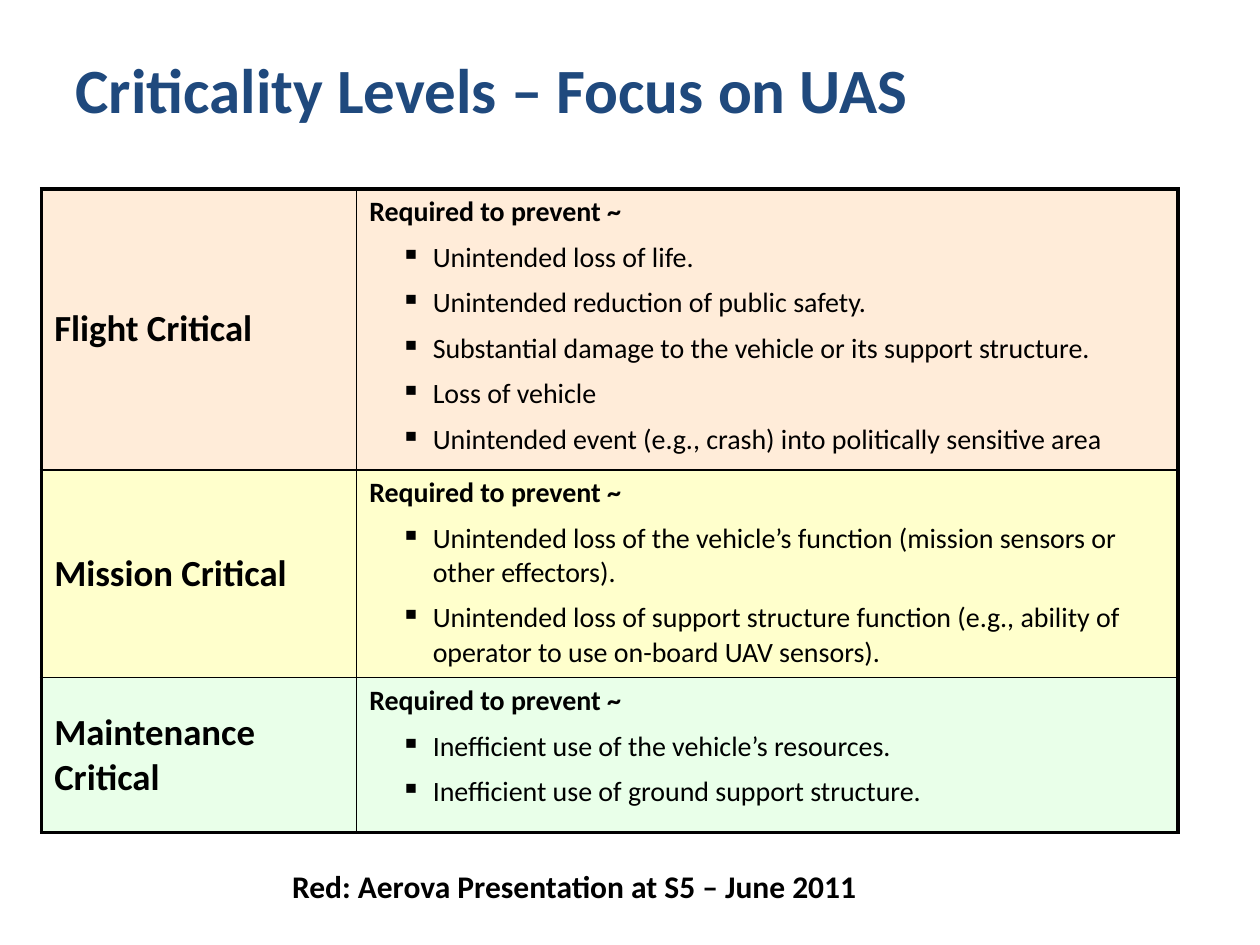
from dataclasses import dataclass

from lxml import etree
from pptx import Presentation
from pptx import util as u
from pptx.dml.color import RGBColor
from pptx.enum import text
from pptx.oxml.ns import qn


@dataclass(frozen=True)
class Theme:
    font: str = "Calibri"
    title: str = "1F497D"
    ink: str = "000000"
    flight: str = "FFECD9"
    mission: str = "FFFFCC"
    maintenance: str = "E9FFE9"
    title_size: int = 36
    label_size: int = 21
    body_size: int = 16
    note_size: int = 18
    frame: float = 2.25
    rule: float = 1


THEME = Theme()

LEVELS = [
    ("Flight Critical", THEME.flight, 5.66, [
        "Unintended loss of life.",
        "Unintended reduction of public safety.",
        "Substantial damage to the vehicle or its support structure.",
        "Loss of vehicle",
        "Unintended event (e.g., crash) into politically sensitive area",
    ]),
    ("Mission Critical", THEME.mission, 4.19, [
        "Unintended loss of the vehicle’s function (mission sensors or other effectors).",
        "Unintended loss of support structure function (e.g., ability of operator "
        "to use on-board UAV sensors).",
    ]),
    ("Maintenance Critical", THEME.maintenance, 3.12, [
        "Inefficient use of the vehicle’s resources.",
        "Inefficient use of ground support structure.",
    ]),
]


def write(p, content, size, color=THEME.ink, bold=False, before=0, bullet=None):
    p.alignment = text.PP_ALIGN.LEFT
    p.space_before = u.Pt(before)
    if bullet:
        pPr = p._p.get_or_add_pPr()
        pPr.set("marL", str(u.Cm(1.28)))
        pPr.set("indent", str(u.Cm(-0.65)))
        etree.SubElement(pPr, qn("a:buChar")).set("char", bullet)
    r = p.add_run()
    r.text = content
    r.font.name = THEME.font
    r.font.size = u.Pt(size)
    r.font.bold = bold
    r.font.color.rgb = RGBColor.from_string(color)


def set_borders(cell, **widths):
    """Draw the cell's L, R, T and B edges with the given widths in points."""
    tcPr = cell._tc.get_or_add_tcPr()
    for side in "LRTB":
        ln = etree.SubElement(tcPr, qn(f"a:ln{side}"), w=str(u.Pt(widths[side])))
        fill = etree.SubElement(ln, qn("a:solidFill"))
        etree.SubElement(fill, qn("a:srgbClr"), val=THEME.ink)


def add_title(s, left, top, width, height):
    sp = s.shapes.title
    sp.left, sp.top, sp.width, sp.height = map(u.Cm, (left, top, width, height))
    tf = sp.text_frame
    tf.auto_size = text.MSO_AUTO_SIZE.NONE
    tf.vertical_anchor = text.MSO_ANCHOR.MIDDLE
    write(tf.paragraphs[0], "Criticality Levels – Focus on UAS",
          THEME.title_size, color=THEME.title, bold=True)


def add_levels_table(s, left, top, width, label_width):
    height = sum(level[2] for level in LEVELS)
    table = s.shapes.add_table(len(LEVELS), 2, u.Cm(left), u.Cm(top),
                               u.Cm(width), u.Cm(height)).table
    table.first_row = table.horz_banding = False
    table.columns[0].width = u.Cm(label_width)
    table.columns[1].width = u.Cm(width - label_width)
    last = len(LEVELS) - 1
    for i, (name, color, row_height, items) in enumerate(LEVELS):
        table.rows[i].height = u.Cm(row_height)
        label, body = table.cell(i, 0), table.cell(i, 1)
        edges = {"T": THEME.rule if i else THEME.frame,
                 "B": THEME.rule if i < last else THEME.frame}
        set_borders(label, L=THEME.frame, R=THEME.rule, **edges)
        set_borders(body, L=THEME.rule, R=THEME.frame, **edges)
        for cell in (label, body):
            cell.fill.solid()
            cell.fill.fore_color.rgb = RGBColor.from_string(color)

        label.vertical_anchor = text.MSO_ANCHOR.MIDDLE
        write(label.text_frame.paragraphs[0], name, THEME.label_size, bold=True)
        tf = body.text_frame
        write(tf.paragraphs[0], "Required to prevent ~", THEME.body_size, bold=True)
        for item in items:
            write(tf.add_paragraph(), item, THEME.body_size, before=6.4, bullet="▪")


def add_note(s, left, top, width, height):
    tf = s.shapes.add_textbox(*map(u.Cm, (left, top, width, height))).text_frame
    tf.word_wrap = True
    write(tf.paragraphs[0], "Red: Aerova Presentation at S5 – June 2011",
          THEME.note_size, bold=True)


def main():
    prs = Presentation()
    prs.slide_width, prs.slide_height = u.Cm(25.4), u.Cm(19.05)
    s = prs.slides.add_slide(prs.slide_layouts[5])
    add_title(s, 1.27, 0.2, 22.86, 3.18)
    add_levels_table(s, 0.84, 3.81, 22.91, label_width=6.35)
    add_note(s, 5.64, 17.35, 13.34, 1.02)
    prs.save("out.pptx")


if __name__ == "__main__":
    main()
